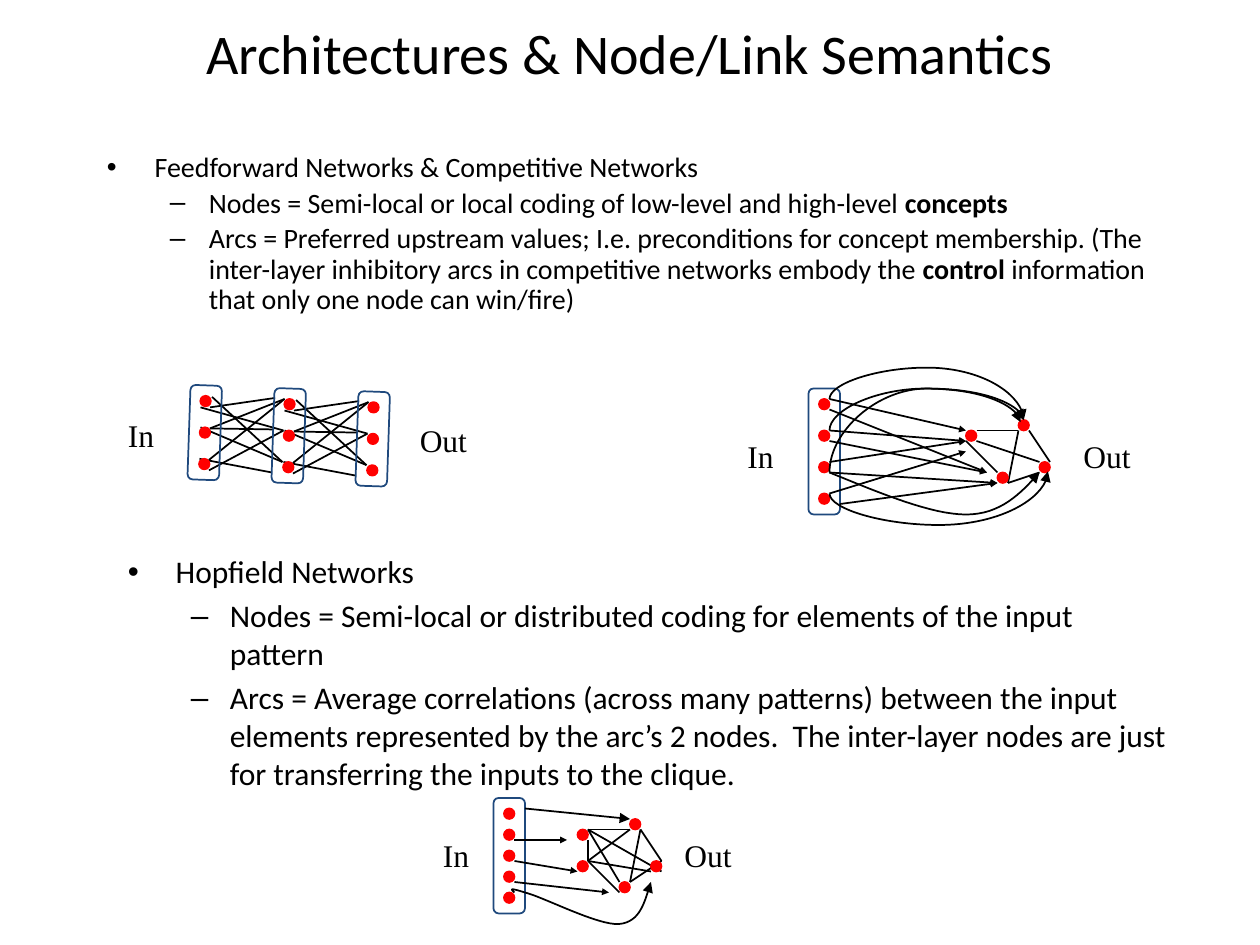
from lxml import etree
from pptx import Presentation, util as u
from pptx.dml.color import RGBColor
from pptx.enum import shapes as kinds, text as t
from pptx.oxml.ns import qn

THEME = {
    "ink": "000000", "node": "FF0000", "layer": "1F497D",
    "body": "Calibri", "label": "Times New Roman",
    "title_pt": 32, "upper_pt": 16, "lower_pt": 18, "label_pt": 18, "line_pt": 1,
}
WIDTH, HEIGHT = 120, 90
CELL = u.Inches(10) / WIDTH

TITLE = "Architectures & Node/Link Semantics"
OUTLINES = [
    {"box": (9, 14, 102, 19), "pt": THEME["upper_pt"], "spacing": 0.9, "points": [
        (0, ["Feedforward Networks & Competitive Networks"]),
        (1, ["Nodes = Semi-local or local coding of low-level and high-level ", "concepts"]),
        (1, ["Arcs = Preferred upstream values; I.e. preconditions for concept membership. "
             "(The inter-layer inhibitory arcs in competitive networks embody the ",
             "control", " information that only one node can win/fire)"]),
    ]},
    {"box": (11, 52, 102, 22), "pt": THEME["lower_pt"], "spacing": 1.0, "points": [
        (0, ["Hopfield Networks"]),
        (1, ["Nodes = Semi-local or distributed coding for elements of the input pattern"]),
        (1, ["Arcs = Average correlations (across many patterns) between the input elements "
             "represented by the arc’s 2 nodes.  The inter-layer nodes are just for "
             "transferring the inputs to the clique."]),
    ]},
]
BULLETS = [("•", 0.38, 0.38), ("–", 0.81, 0.31)]

LAYER_LINKS = [
    (26.9, 44, 19.1, 40.7), (27, 41, 19.1, 38.8), (27.1, 38, 19.9, 43.8),
    (27, 41, 19.9, 44.8), (26.9, 44, 20.2, 37.8), (20, 40.8, 27.1, 38),
    (20, 40.8, 26, 40.9), (25.9, 45, 19, 43.7), (26.2, 37.9, 20, 38.8),
]
LAYER_STEP = (8, 0.3)


def shifted(x, y, layer):
    return x + LAYER_STEP[0] * layer, y + LAYER_STEP[1] * layer


FEEDFORWARD = {
    "links": [shifted(a, b, k) + shifted(c, d, k)
              for k in range(2) for a, b, c, d in LAYER_LINKS],
    "nodes": [shifted(19.08 - 0.06 * row, 37.7 + 3 * row, k)
              for k in range(3) for row in range(3)],
    "bars": [shifted(18, 36.7, k) + (3, 9) for k in range(3)],
    "tilt": 1.9,
    "labels": [("In", 11, 39), ("Out", 38.8, 39.5)],
}
COMPETITIVE = {
    "nodes": [(78, 38 + 3 * row) for row in range(4)]
             + [(92, 41), (95, 45), (99, 44), (97, 40)],
    "bars": [(77, 37, 3, 12)],
    "links": [(96, 46, 97, 41), (93, 42, 99, 44), (96, 46, 99, 45),
              (100, 44, 98, 41), (93, 41, 97, 41), (95, 45, 92, 42)],
    "arrows": [(79, 38, 92, 41), (79, 41, 92, 42), (79, 44, 92, 42), (79, 47, 92, 43),
               (79, 39, 94, 45), (79, 42, 94, 45), (79, 45, 95, 46), (80, 48, 95, 46)],
    "arcs": [(79, 38, 97.5, 40, 35), (79, 47, 99.8, 44.9, 50),
             (79, 45, 97.5, 40, 37), (79, 41, 97.2, 40.2, 37)],
    "sweep": [(79, 45), (83.9, 47), (88.7, 49), (92, 49), (95.3, 49), (97.2, 47), (99, 45)],
    "labels": [("In", 70, 41), ("Out", 102, 41)],
}
HOPFIELD = {
    "nodes": [(48, 77 + 2 * row) for row in range(5)]
             + [(55, 79), (55, 82), (59, 84), (62, 82), (60, 78)],
    "bars": [(47, 76, 3, 11)],
    "links": [(60, 84, 61, 79), (56, 82, 56, 80), (59, 84, 56, 79), (60, 84, 63, 82),
              (63, 82, 61, 79), (56, 82, 60, 79), (56, 79, 60, 79), (56, 82, 62, 83),
              (63, 83, 56, 79), (59, 85, 56, 82)],
    "arrows": [(49, 84, 58, 85), (49, 82, 55, 83), (49, 80, 54, 80)],
    "long_arrows": [(50, 77, 60, 78)],
    "sweep": [(49, 85), (48.7, 84.7), (48.4, 84.5), (50, 85), (51.7, 85.4),
              (57, 88.2), (59, 88), (61, 87.8), (61.4, 85.9), (62, 84)],
    "labels": [("In", 41, 79), ("Out", 64, 79)],
}


def place(*cells):
    return [u.Emu(round(cell * CELL)) for cell in cells]


def color(role):
    return RGBColor.from_string(THEME[role])


def style(run, pt, face="body", bold=False):
    run.font.size, run.font.name, run.font.bold = u.Pt(pt), THEME[face], bold
    run.font.color.rgb = color("ink")


def stroke(part, role="ink", head=None):
    part.line.color.rgb = color(role)
    part.line.width = u.Pt(THEME["line_pt"])
    if head:
        etree.SubElement(part.line._get_or_add_ln(), qn("a:tailEnd"),
                         type="triangle", w=head, len=head)


def add_preset(group, preset, box, role, filled):
    part = group.shapes.add_shape(preset, *place(*box))
    part.shadow.inherit = False
    if filled:
        part.fill.solid()
        part.fill.fore_color.rgb = color(role)
    else:
        part.fill.background()
    stroke(part, role)
    return part


def add_link(group, ends, head=None, kind=kinds.MSO_CONNECTOR.STRAIGHT):
    link = group.shapes.add_connector(kind, *place(*ends))
    stroke(link, head=head)
    etree.SubElement(link._element.spPr, qn("a:effectLst"))
    return link


def add_arc(group, x1, y1, x2, y2, apex):
    arc = add_link(group, (x1, y1, x2, y2), "med", kinds.MSO_CONNECTOR.CURVE)
    across, down = x2 - x1, y2 - y1
    arc.left, arc.top, arc.width, arc.height = place(
        (x1 + x2 - abs(down)) / 2, (y1 + y2 - across) / 2, abs(down), across)
    frame = arc._element.spPr.find(qn("a:xfrm"))
    for flip in ("flipH", "flipV"):
        frame.attrib.pop(flip, None)
    frame.set("rot", str((90 if down > 0 else 270) * 60000))
    if down > 0:
        frame.set("flipV", "1")
    guides = arc._element.spPr.find(qn("a:prstGeom")).get_or_add_avLst()
    etree.SubElement(guides, qn("a:gd"), name="adj1",
                     fmla=f"val {round((apex - y1) / down * 100000)}")


def add_sweep(group, controls, steps=16):
    trail = []
    for first in range(0, len(controls) - 1, 3):
        for step in range(1, steps + 1):
            s = step / steps
            weights = ((1 - s) ** 3, 3 * s * (1 - s) ** 2, 3 * s * s * (1 - s), s ** 3)
            trail.append(place(*(sum(w * p[axis] for w, p in zip(weights, controls[first:]))
                                 for axis in (0, 1))))
    builder = group.shapes.build_freeform(*place(*controls[0]))
    builder.add_line_segments(trail, close=False)
    sweep = builder.convert_to_shape()
    sweep.shadow.inherit = False
    sweep.fill.background()
    stroke(sweep, head="med")


def add_network(slide, network):
    group = slide.shapes.add_group_shape()
    for ends in network["links"]:
        add_link(group, ends)
    for x, y in network["nodes"]:
        add_preset(group, kinds.MSO_SHAPE.OVAL, (x, y, 1, 1), "node", True)
    for box in network["bars"]:
        bar = add_preset(group, kinds.MSO_SHAPE.ROUNDED_RECTANGLE, box, "layer", False)
        bar.rotation = network.get("tilt", 0)
    for key, head in (("arrows", "sm"), ("long_arrows", "med")):
        for ends in network.get(key, []):
            add_link(group, ends, head)
    for arc in network.get("arcs", []):
        add_arc(group, *arc)
    if "sweep" in network:
        add_sweep(group, network["sweep"])
    for word, x, y in network["labels"]:
        label = group.shapes.add_textbox(*place(x, y, 4.9 if word == "In" else 7, 4.8))
        label.text_frame.text = word
        label.text_frame.word_wrap = False
        label.text_frame.auto_size = t.MSO_AUTO_SIZE.SHAPE_TO_FIT_TEXT
        style(label.text_frame.paragraphs[0].runs[0], THEME["label_pt"], "label")


def add_outline(slide, outline):
    frame = slide.shapes.add_textbox(*place(*outline["box"])).text_frame
    frame.word_wrap = True
    for index, (level, pieces) in enumerate(outline["points"]):
        point = frame.add_paragraph() if index else frame.paragraphs[0]
        point.level, point.line_spacing = level, outline["spacing"]
        point.space_before = u.Pt(outline["pt"] * 0.2)
        mark, margin, hang = BULLETS[level]
        props = point._p.get_or_add_pPr()
        props.set("marL", str(u.Inches(margin)))
        props.set("indent", str(-u.Inches(hang)))
        etree.SubElement(props, qn("a:buFont"), typeface="Arial")
        etree.SubElement(props, qn("a:buChar"), char=mark)
        for order, piece in enumerate(pieces):
            run = point.add_run()
            run.text = piece
            style(run, outline["pt"], bold=order % 2 == 1)


def main():
    deck = Presentation()
    deck.slide_width, deck.slide_height = place(WIDTH, HEIGHT)
    slide = deck.slides.add_slide(deck.slide_layouts[6])
    title = slide.shapes.add_textbox(*place(9, 2, 102, 6)).text_frame
    title.text, title.word_wrap = TITLE, True
    title.vertical_anchor = t.MSO_ANCHOR.MIDDLE
    title.paragraphs[0].alignment = t.PP_ALIGN.CENTER
    style(title.paragraphs[0].runs[0], THEME["title_pt"])
    for outline in OUTLINES:
        add_outline(slide, outline)
    for network in (HOPFIELD, FEEDFORWARD, COMPETITIVE):
        add_network(slide, network)
    deck.save("out.pptx")


if __name__ == "__main__":
    main()
